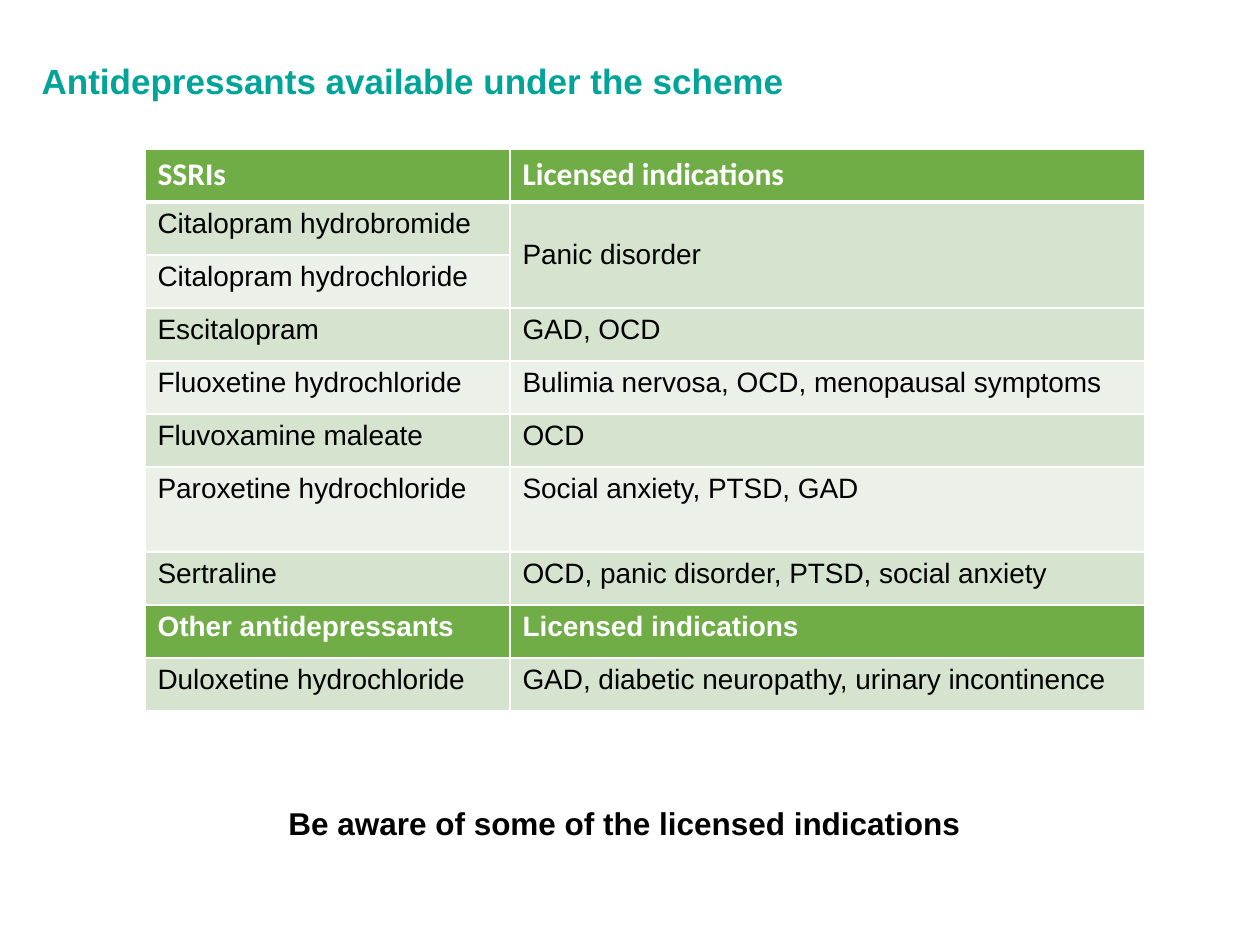
"""Build a slide listing antidepressants and their licensed indications."""
from lxml import etree
from pptx import Presentation, util as u
from pptx.dml.color import RGBColor
from pptx.enum import text
from pptx.oxml import ns

PX = u.Inches(1) // 126
TEAL = RGBColor(0x00, 0xA4, 0x99)
GREEN = RGBColor(0x70, 0xAD, 0x47)
PALE = RGBColor(0xD5, 0xE3, 0xCF)
PALEST = RGBColor(0xEB, 0xF1, 0xE9)
WHITE = RGBColor(0xFF, 0xFF, 0xFF)
BLACK = RGBColor(0x00, 0x00, 0x00)

ROWS = [
    ("SSRIs", "Licensed indications"),
    ("Citalopram hydrobromide", "Panic disorder"),
    ("Citalopram hydrochloride", ""),
    ("Escitalopram", "GAD, OCD"),
    ("Fluoxetine hydrochloride", "Bulimia nervosa, OCD, menopausal symptoms"),
    ("Fluvoxamine maleate", "OCD"),
    ("Paroxetine hydrochloride", "Social anxiety, PTSD, GAD"),
    ("Sertraline", "OCD, panic disorder, PTSD, social anxiety"),
    ("Other antidepressants", "Licensed indications"),
    ("Duloxetine hydrochloride", "GAD, diabetic neuropathy, urinary incontinence"),
]
HEADINGS = (0, 8)
TALL_ROW = 6


def write(frame, words, size, color, bold, font="Arial"):
    frame.text = words
    for span in frame.paragraphs[0].runs:
        span.font.name = font
        span.font.size = u.Pt(size)
        span.font.bold = bold
        span.font.color.rgb = color


def add_border(cell, side, points):
    props = cell._tc.get_or_add_tcPr()
    line = etree.SubElement(props, ns.qn(f"a:ln{side}"), w=str(u.Pt(points)))
    fill = etree.SubElement(line, ns.qn("a:solidFill"))
    etree.SubElement(fill, ns.qn("a:srgbClr"), val=str(WHITE))


deck = Presentation()
deck.slide_width = u.Inches(10)
deck.slide_height = u.Inches(7.5)
page = deck.slides.add_slide(deck.slide_layouts[5])

title = page.shapes.title
title.left, title.top, title.width, title.height = (n * PX for n in (29, 53, 1128, 55))
write(title.text_frame, "Antidepressants available under the scheme", 20, TEAL, True)
title.text_frame.vertical_anchor = text.MSO_ANCHOR.TOP
title.text_frame.paragraphs[0].alignment = text.PP_ALIGN.LEFT

heights = [85 if r == TALL_ROW else 53 for r in range(len(ROWS))]
table = page.shapes.add_table(
    len(ROWS), 2, 145 * PX, 149 * PX, 1000 * PX, sum(heights) * PX).table
for column, width in zip(table.columns, (365, 635)):
    column.width = width * PX

for r, entries in enumerate(ROWS):
    table.rows[r].height = heights[r] * PX
    heading = r in HEADINGS
    for c, words in enumerate(entries):
        cell = table.cell(r, c)
        for side in "LRTB":
            thick = (r, side) in ((0, "B"), (1, "T"))
            add_border(cell, side, 3 if thick else 1)
        cell.fill.solid()
        cell.fill.fore_color.rgb = GREEN if heading else PALE if r % 2 else PALEST
        size, font = (18, "Calibri") if r == 0 else (16, "Arial")
        write(cell.text_frame, words, size, WHITE if heading else BLACK, heading, font)

table.cell(1, 1).merge(table.cell(2, 1))
table.cell(1, 1).vertical_anchor = text.MSO_ANCHOR.MIDDLE

note = page.shapes.add_textbox(276 * PX, 798 * PX, 723 * PX, 50 * PX)
write(note.text_frame, "Be aware of some of the licensed indications", 18, BLACK, True)
note.text_frame.word_wrap = False

deck.save("out.pptx")
